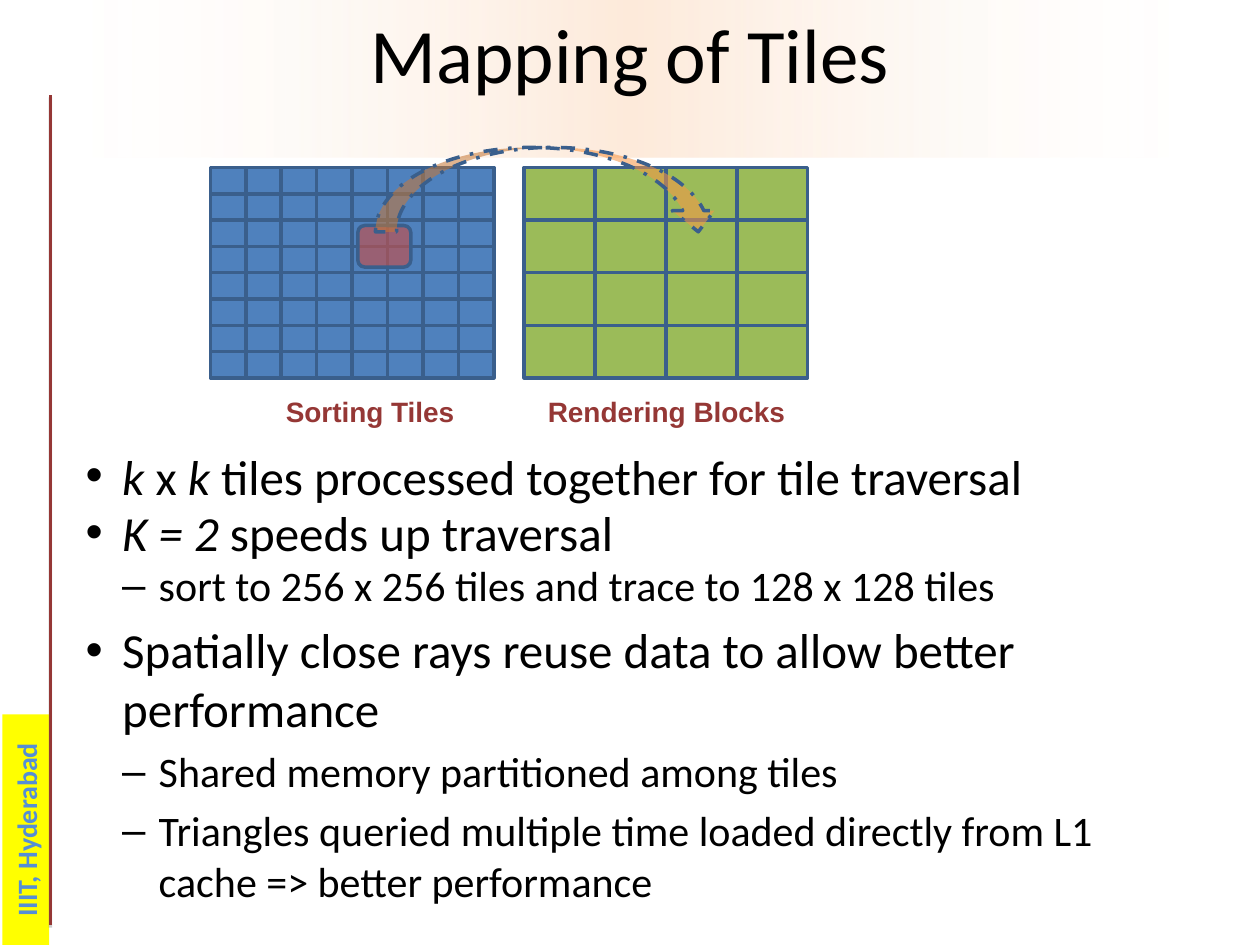
from dataclasses import dataclass
from typing import Any

from lxml import etree
from pptx import Presentation
from pptx.dml.color import RGBColor
from pptx.enum.dml import MSO_LINE_DASH_STYLE as Dash
from pptx.enum.shapes import MSO_CONNECTOR as Connector, MSO_SHAPE as Preset
from pptx.enum.text import MSO_ANCHOR as Anchor, MSO_AUTO_SIZE as AutoSize, PP_ALIGN as Align
from pptx.oxml import parse_xml
from pptx.oxml.ns import nsdecls, qn
from pptx.util import Inches, Pt

BLACK = RGBColor(0x00, 0x00, 0x00)
YELLOW = RGBColor(0xFF, 0xFF, 0x00)
LABEL_BLUE = RGBColor(0x55, 0x8E, 0xD5)
MAROON = RGBColor(0x95, 0x37, 0x35)
TILE_BLUE = RGBColor(0x4F, 0x81, 0xBD)
BLOCK_GREEN = RGBColor(0x9B, 0xBB, 0x59)
EDGE_BLUE = RGBColor(0x3A, 0x5F, 0x8C)
MARK_RED = RGBColor(0xC0, 0x50, 0x4D)
ARROW_ORANGE = RGBColor(0xF7, 0x96, 0x46)
CREAM = RGBColor(0xFD, 0xEA, 0xDA)
WHITE = RGBColor(0xFF, 0xFF, 0xFF)
SHADOW_GREY = RGBColor(0x80, 0x80, 0x80)

CAPTION_FORMAT = {"name": "Arial", "size": Pt(16), "bold": True}
SIDE_FORMAT = {"name": "Calibri", "size": Pt(16), "bold": True}
TITLE_FORMAT = {"name": "Calibri", "size": Pt(44)}


@dataclass(frozen=True)
class Box:
    left: float
    top: float
    width: float
    height: float

    def lengths(self) -> list:
        return [Inches(n) for n in (self.left, self.top, self.width, self.height)]


@dataclass(frozen=True)
class Grid:
    left: float
    count: int
    colour: RGBColor


@dataclass(frozen=True)
class Caption:
    text: str
    box: Box
    wrap: bool


@dataclass(frozen=True)
class Bullet:
    spans: tuple
    level: int = 0
    line_spacing: float = 1.0


GRID_TOP, GRID_WIDTH, GRID_HEIGHT = 1.33, 2.25, 1.67
GRIDS = (Grid(1.67, 8, TILE_BLUE), Grid(4.16, 4, BLOCK_GREEN))
CAPTIONS = (
    Caption("Sorting Tiles", Box(2.17, 3.08, 1.56, 0.37), False),
    Caption("Rendering Blocks", Box(4.25, 3.08, 2.17, 0.37), True),
)
BULLETS = (
    Bullet((("k ", True), ("x ", False), ("k ", True),
            ("tiles processed together for tile traversal", False)), 0, 0.8),
    Bullet((("K = 2", True), (" speeds up traversal", False)), 0, 0.8),
    Bullet((("sort to 256 x 256 tiles and trace to 128 x 128 tiles", False),), 1, 0.8),
    Bullet((("Spatially close rays reuse data to allow better performance", False),)),
    Bullet((("Shared memory partitioned among tiles", False),), 1),
    Bullet((("Triangles queried multiple time loaded directly from L1 cache => better performance",
             False),), 1),
)
LEVEL_SIZES = (28, 24)
LEVEL_MARKS = ("•", "–")
INDENT = 0.29


def apply_format(target: Any, values: dict) -> None:
    for name, value in values.items():
        setattr(target, name, value)


def add_span(para: Any, text: str, colour: RGBColor, values: dict) -> Any:
    span = para.add_run()
    span.text = text
    apply_format(span.font, values)
    span.font.color.rgb = colour
    return span


def shadow_effect(alpha: int, distance: float, angle: int) -> Any:
    return parse_xml(
        f'<a:effectLst {nsdecls("a")}><a:outerShdw blurRad="0" dist="{Pt(distance)}" '
        f'dir="{angle * 60000}" algn="ctr"><a:srgbClr val="{SHADOW_GREY}">'
        f'<a:alpha val="{alpha * 1000}"/></a:srgbClr></a:outerShdw></a:effectLst>')


def add_filled(shapes: Any, preset: Any, box: Box, colour: RGBColor,
               edged: bool = True, opacity: int = 100) -> Any:
    shape = shapes.add_shape(preset, *box.lengths())
    shape.shadow.inherit = False
    shape.fill.solid()
    shape.fill.fore_color.rgb = colour
    if opacity < 100:
        tint = shape.fill._xPr.find(qn("a:solidFill"))[0]
        etree.SubElement(tint, qn("a:alpha")).set("val", str(opacity * 1000))
    if edged:
        shape.line.color.rgb = EDGE_BLUE
        shape.line.width = Pt(2)
    else:
        shape.line.fill.background()
    return shape


def add_side_label(slide: Any) -> None:
    label = add_filled(slide.shapes, Preset.RECTANGLE, Box(-0.71, 6.4, 1.83, 0.37), YELLOW, False)
    label.rotation = 270
    apply_format(label.text_frame, {"word_wrap": True, "vertical_anchor": Anchor.MIDDLE})
    para = label.text_frame.paragraphs[0]
    para.alignment = Align.CENTER
    add_span(para, "IIIT, Hyderabad", LABEL_BLUE, SIDE_FORMAT)

    rule = slide.shapes.add_connector(
        Connector.STRAIGHT, Inches(0.4), Inches(7.34), Inches(0.4), Inches(0.75))
    rule.line.color.rgb = MAROON
    rule.line.width = Pt(2)
    rule._element.spPr.append(shadow_effect(38, 1.6, 90))


def fill_title(title: Any) -> None:
    apply_format(title, dict(zip(("left", "top", "width", "height"),
                                 Box(0.5, 0, 9, 1.25).lengths())))
    stops = "".join(
        f'<a:gs pos="{place * 1000}"><a:srgbClr val="{colour}">'
        f'<a:alpha val="{alpha * 1000}"/></a:srgbClr></a:gs>'
        for place, colour, alpha in ((0, WHITE, 20), (50, CREAM, 100), (100, WHITE, 20)))
    title._element.spPr.append(parse_xml(
        f'<a:gradFill {nsdecls("a")} rotWithShape="1"><a:gsLst>{stops}</a:gsLst>'
        '<a:lin ang="0" scaled="1"/></a:gradFill>'))
    apply_format(title.text_frame, {"vertical_anchor": Anchor.TOP, "auto_size": AutoSize.NONE})
    para = title.text_frame.paragraphs[0]
    para.alignment = Align.CENTER
    span = add_span(para, "Mapping of Tiles", BLACK, TITLE_FORMAT)
    span._r.rPr.find(qn("a:solidFill")).addnext(shadow_effect(40, 3, 45))


def fill_body(body: Any) -> None:
    apply_format(body, dict(zip(("left", "top", "width", "height"),
                                Box(0.58, 3.58, 9, 1.08).lengths())))
    frame = body.text_frame
    apply_format(frame, {"auto_size": AutoSize.NONE, "vertical_anchor": Anchor.TOP})
    for index, bullet in enumerate(BULLETS):
        para = frame.add_paragraph() if index else frame.paragraphs[0]
        size = LEVEL_SIZES[bullet.level]
        properties = para._p.get_or_add_pPr()
        properties.set("marL", str(Inches(INDENT * (bullet.level + 1))))
        properties.set("indent", str(Inches(-INDENT)))
        etree.SubElement(properties, qn("a:buChar")).set("char", LEVEL_MARKS[bullet.level])
        apply_format(para, {"level": bullet.level, "line_spacing": bullet.line_spacing,
                            "space_before": Pt(size * 0.2 if index else 0)})
        for text, italic in bullet.spans:
            add_span(para, text, BLACK, {"name": "Calibri", "size": Pt(size), "italic": italic})


def add_grid(shapes: Any, grid: Grid) -> None:
    width, height = GRID_WIDTH / grid.count, GRID_HEIGHT / grid.count
    for row in range(grid.count):
        for column in range(grid.count):
            cell = Box(grid.left + column * width, GRID_TOP + row * height, width, height)
            add_filled(shapes, Preset.RECTANGLE, cell, grid.colour)


def add_caption(slide: Any, caption: Caption) -> None:
    box = slide.shapes.add_textbox(*caption.box.lengths())
    box.text_frame.word_wrap = caption.wrap
    add_span(box.text_frame.paragraphs[0], caption.text, MAROON, CAPTION_FORMAT)


def main() -> None:
    deck = Presentation()
    apply_format(deck, {"slide_width": Inches(10), "slide_height": Inches(7.5)})
    page = deck.slides.add_slide(deck.slide_layouts[1])
    add_side_label(page)
    fill_title(page.shapes.title)
    fill_body(page.placeholders[1])
    diagram = page.shapes.add_group_shape().shapes
    for grid in GRIDS:
        add_grid(diagram, grid)
    add_filled(diagram, Preset.ROUNDED_RECTANGLE, Box(2.84, 1.79, 0.42, 0.33), MARK_RED, opacity=66)
    arrow = add_filled(diagram, Preset.CURVED_DOWN_ARROW, Box(2.98, 1.17, 2.73, 0.67),
                       ARROW_ORANGE, opacity=56)
    arrow.line.dash_style = Dash.DASH_DOT
    for caption in CAPTIONS:
        add_caption(page, caption)
    deck.save("out.pptx")


if __name__ == "__main__":
    main()
